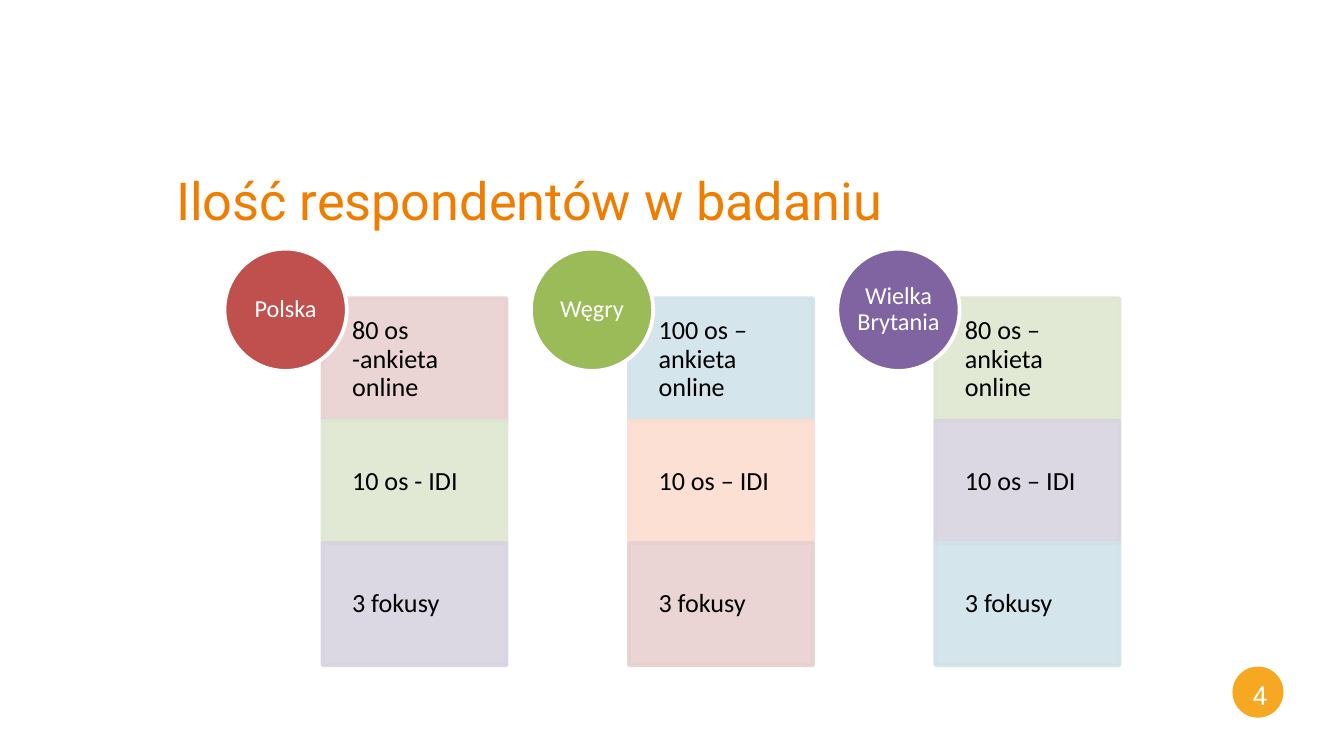
import pptx
import pptx.util
import lxml.etree
from pptx.dml.color import RGBColor
from pptx.enum.shapes import MSO_SHAPE
from pptx.enum.text import MSO_ANCHOR, MSO_AUTO_SIZE, PP_ALIGN
from pptx.oxml.ns import qn
from pptx.util import Inches

COLORS = {
    "title": "EF7D00", "badge": "F7A823", "white": "FFFFFF", "black": "000000",
    "red": "C0504D", "green": "9BBB59", "purple": "8064A2",
    "pale red": "E8D0D0", "pale green": "DEE7D1", "pale purple": "D8D3E0",
    "pale blue": "D0E3EA", "pale orange": "FCDDCF",
}


def add_block(kind, left, top, width, height, fill, line=None, opacity=100):
    block = slide.shapes.add_shape(
        kind, Inches(left), Inches(top), Inches(width), Inches(height))
    block.shadow.inherit = False
    block.fill.solid()
    block.fill.fore_color.rgb = RGBColor.from_string(COLORS[fill])
    if line:
        block.line.color.rgb = RGBColor.from_string(COLORS[line])
        block.line.width = pptx.util.Pt(2)
    else:
        block.line.fill.background()
    if opacity < 100:
        for color in block._element.spPr.iter(qn("a:srgbClr")):
            lxml.etree.SubElement(color, qn("a:alpha"), val=str(opacity * 1000))
    return block


def write(shape, text, size, color, font, align, insets, spacing=1.0):
    """Fill a shape with one run; insets are left, top, right, bottom in inches."""
    frame = shape.text_frame
    frame.word_wrap = True
    frame.auto_size = MSO_AUTO_SIZE.NONE
    frame.vertical_anchor = MSO_ANCHOR.MIDDLE
    (frame.margin_left, frame.margin_top,
     frame.margin_right, frame.margin_bottom) = map(Inches, insets)
    paragraph = frame.paragraphs[0]
    paragraph.alignment = align
    paragraph.line_spacing = spacing
    run = paragraph.add_run()
    run.text = text
    run.font.size = pptx.util.Pt(size)
    run.font.name = font
    run.font.color.rgb = RGBColor.from_string(COLORS[color])


deck = pptx.Presentation()
deck.slide_width = Inches(10)
deck.slide_height = Inches(10 * 9 / 16)
slide = deck.slides.add_slide(deck.slide_layouts[5])

title = slide.shapes.title
title.left, title.top = Inches(1.21), Inches(1.2)
title.width, title.height = Inches(7.09), Inches(0.57)
write(title, "Ilość respondentów w badaniu", 28, "title", "Roboto",
      PP_ALIGN.LEFT, (0.1, 0.05, 0.1, 0.05))

add_block(MSO_SHAPE.OVAL, 9.17, 4.96, 0.38, 0.38, "badge")
page_number = slide.shapes.add_textbox(
    Inches(9.22), Inches(5), Inches(0.31), Inches(0.34))
write(page_number, "4", 14, "white", "Roboto", PP_ALIGN.CENTER, (0.05, 0.05, 0.05, 0.05))

countries = [
    ("Polska", "red", [("80 os -ankieta online", "pale red"),
                       ("10 os - IDI", "pale green"),
                       ("3 fokusy", "pale purple")]),
    ("Węgry", "green", [("100 os – ankieta online", "pale blue"),
                        ("10 os – IDI", "pale orange"),
                        ("3 fokusy", "pale red")]),
    ("Wielka Brytania", "purple", [("80 os – ankieta online", "pale green"),
                                   ("10 os – IDI", "pale purple"),
                                   ("3 fokusy", "pale blue")]),
]
COLUMN_STEP = 2.28
SIDE = 0.91  # height of a cell and diameter of a country circle

for column, (country, country_color, methods) in enumerate(countries):
    left = 1.67 + column * COLUMN_STEP
    for row, (method, tint) in enumerate(methods):
        cell = add_block(MSO_SHAPE.RECTANGLE, left + 0.73, 2.22 + row * SIDE,
                         1.37, SIDE, tint, line=tint, opacity=90)
        write(cell, method, 14, "black", "Calibri", PP_ALIGN.LEFT,
              (0.22, 0.11, 0.11, 0.11), spacing=0.9)
    circle = add_block(MSO_SHAPE.OVAL, left, 1.85, SIDE, SIDE, country_color, line="white")
    write(circle, country, 13, "white", "Calibri", PP_ALIGN.CENTER,
          (0, 0, 0, 0), spacing=0.9)

deck.save("out.pptx")
